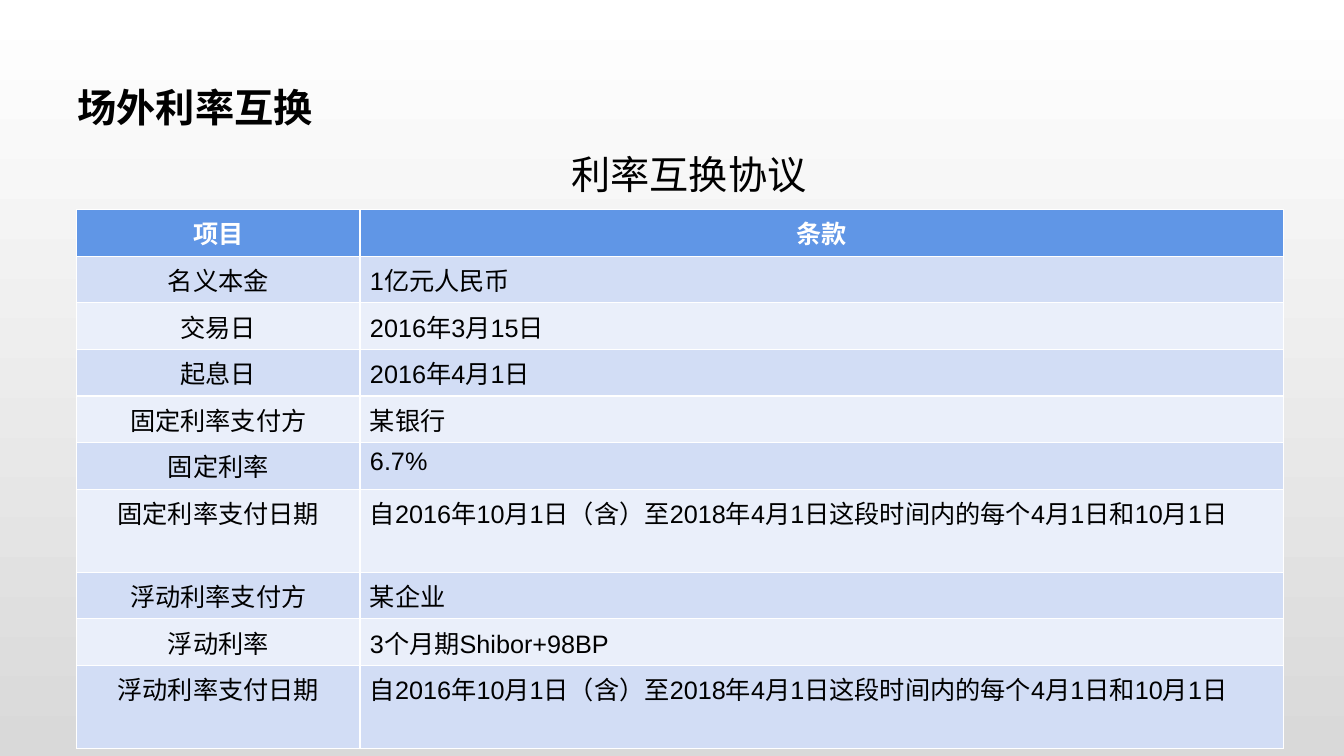
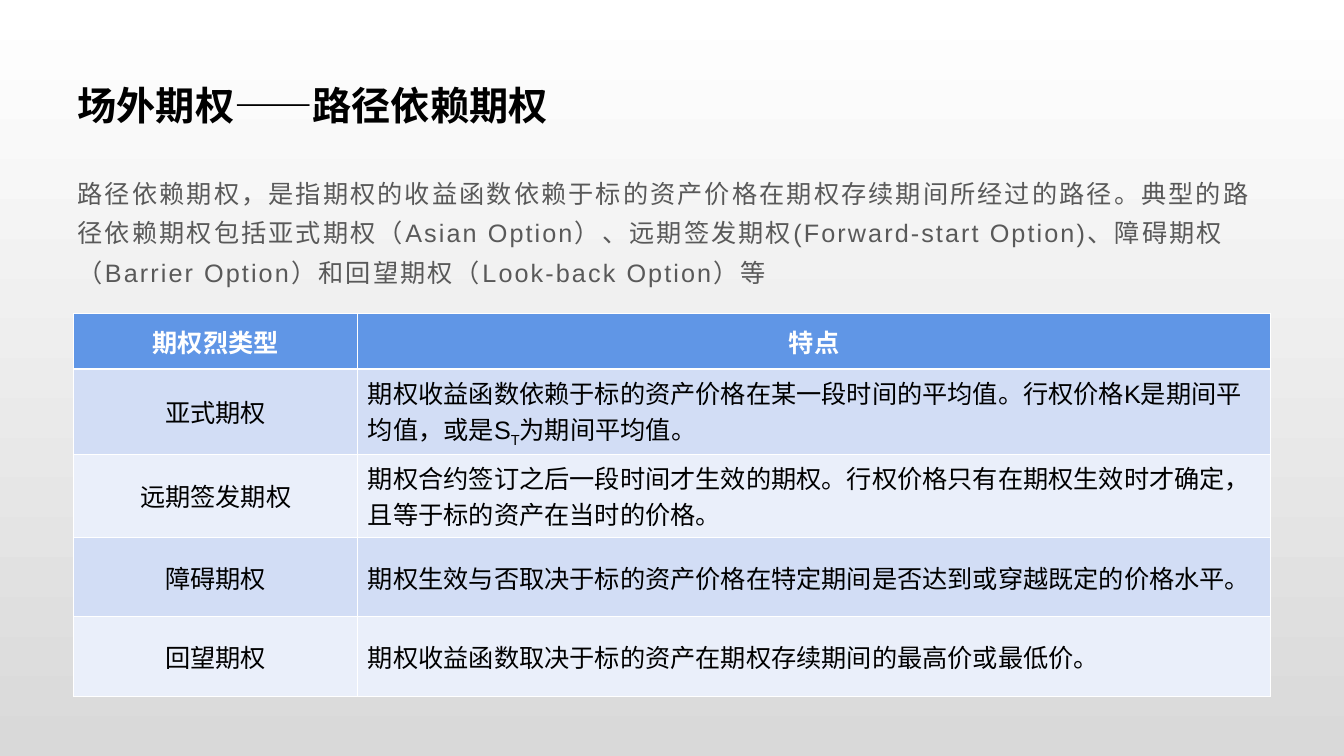
from lxml import etree
from pptx import Presentation
from pptx.dml.color import RGBColor
from pptx.enum import text as t
from pptx.oxml import ns
from pptx.util import Inches, Pt

FONT = "Arial"
BLACK = RGBColor(0x00, 0x00, 0x00)
WHITE = RGBColor(0xFF, 0xFF, 0xFF)
GREY = RGBColor(0x59, 0x59, 0x59)
FADE = RGBColor(0xD9, 0xD9, 0xD9)
HEADER = RGBColor(0x60, 0x96, 0xE6)
BANDS = RGBColor(0xD2, 0xDD, 0xF5), RGBColor(0xEA, 0xEF, 0xFA)

PAY_DATES = "自2016年10月1日（含）至2018年4月1日这段时间内的每个4月1日和10月1日"
SWAP_CAPTION = "利率互换协议"
SWAP_ROWS = [
    ("项目", "条款"),
    ("名义本金", "1亿元人民币"),
    ("交易日", "2016年3月15日"),
    ("起息日", "2016年4月1日"),
    ("固定利率支付方", "某银行"),
    ("固定利率", "6.7%"),
    ("固定利率支付日期", PAY_DATES),
    ("浮动利率支付方", "某企业"),
    ("浮动利率", "3个月期Shibor+98BP"),
    ("浮动利率支付日期", PAY_DATES),
]

OPTION_INTRO = (
    "路径依赖期权，是指期权的收益函数依赖于标的资产价格在期权存续期间所经过的路径。"
    "典型的路径依赖期权包括亚式期权（Asian Option）、远期签发期权(Forward-start Option)、"
    "障碍期权（Barrier Option）和回望期权（Look-back Option）等"
)
# A tuple in a cell alternates normal and subscript runs.
OPTION_ROWS = [
    ("期权烈类型", "特点"),
    ("亚式期权", ("期权收益函数依赖于标的资产价格在某一段时间的平均值。"
              "行权价格K是期间平均值，或是S", "T", "为期间平均值。")),
    ("远期签发期权", "期权合约签订之后一段时间才生效的期权。"
               "行权价格只有在期权生效时才确定，且等于标的资产在当时的价格。"),
    ("障碍期权", "期权生效与否取决于标的资产价格在特定期间是否达到或穿越既定的价格水平。"),
    ("回望期权", "期权收益函数取决于标的资产在期权存续期间的最高价或最低价。"),
]


def set_background(master):
    fill = master.background.fill
    fill.gradient()
    fill.gradient_angle = 270
    for stop, color in zip(fill.gradient_stops, (WHITE, FADE)):
        stop.color.rgb = color


def style(p, size, color, bold=False, align=t.PP_ALIGN.LEFT):
    p.alignment = align
    p.font.name = FONT
    p.font.size = Pt(size)
    p.font.color.rgb = color
    p.font.bold = bold


def place(shape, left, top, width, height):
    shape.left, shape.top = Inches(left), Inches(top)
    shape.width, shape.height = Inches(width), Inches(height)


def add_slide(prs, layout, title, top):
    s = prs.slides.add_slide(prs.slide_layouts[layout])
    place(s.shapes.title, 0.67, top, 12, 0.77)
    tf = s.shapes.title.text_frame
    tf.text = title
    tf.auto_size = t.MSO_AUTO_SIZE.NONE
    tf.vertical_anchor = t.MSO_ANCHOR.MIDDLE
    style(tf.paragraphs[0], 28, BLACK, bold=True)
    return s


def add_caption(s, caption):
    box = s.shapes.add_textbox(*map(Inches, (5.57, 1.44, 2.73, 0.57)))
    tf = box.text_frame
    tf.word_wrap = True
    tf.text = caption
    style(tf.paragraphs[0], 28, BLACK)


def add_intro(s, intro):
    body = s.placeholders[1]
    place(body, 0.67, 1.63, 12, 5.2)
    tf = body.text_frame
    tf.text = intro
    tf.auto_size = t.MSO_AUTO_SIZE.NONE
    p = tf.paragraphs[0]
    style(p, 18, GREY)
    p.line_spacing, p.space_before, p.space_after = 1.3, Pt(0), Pt(10)
    p.runs[0].font._element.set("spc", "150")
    pPr = p._p.get_or_add_pPr()
    pPr.set("marL", "0")
    pPr.set("indent", "0")
    bullet = etree.Element(ns.qn("a:buNone"))
    pPr.find(ns.qn("a:spcAft")).addnext(bullet)


def add_grid(s, rows, left, top, cols, heights, anchor):
    frame = s.shapes.add_table(len(rows), len(cols), Inches(left), Inches(top),
                               Inches(sum(cols)), Inches(sum(heights)))
    table = frame.table
    for col, width in zip(table.columns, cols):
        col.width = Inches(width)
    for i, (row, height) in enumerate(zip(rows, heights)):
        table.rows[i].height = Inches(height)
        head = i == 0
        for j, content in enumerate(row):
            cell = table.cell(i, j)
            cell.fill.solid()
            cell.fill.fore_color.rgb = HEADER if head else BANDS[(i - 1) % 2]
            cell.vertical_anchor = anchor
            p = cell.text_frame.paragraphs[0]
            parts = (content,) if isinstance(content, str) else content
            for k, part in enumerate(parts):
                r = p.add_run()
                r.text = part
                if k % 2:
                    r.font._element.set("baseline", "-25000")
            centred = head or j == 0
            style(p, 18, WHITE if head else BLACK, head,
                  t.PP_ALIGN.CENTER if centred else t.PP_ALIGN.LEFT)


def main():
    prs = Presentation()
    prs.slide_width, prs.slide_height = Inches(13.33), Inches(7.5)
    set_background(prs.slide_master)

    swap = add_slide(prs, 5, "场外利率互换", 0.67)
    add_grid(swap, SWAP_ROWS, 0.76, 2.08, (2.81, 9.16),
             [0.42] * len(SWAP_ROWS), t.MSO_ANCHOR.TOP)
    add_caption(swap, SWAP_CAPTION)

    option = add_slide(prs, 1, "场外期权——路径依赖期权", 0.65)
    add_intro(option, OPTION_INTRO)
    add_grid(option, OPTION_ROWS, 0.73, 3.11, (2.82, 9.05),
             [0.55] + [0.79] * (len(OPTION_ROWS) - 1), t.MSO_ANCHOR.MIDDLE)

    prs.save("out.pptx")


if __name__ == "__main__":
    main()
